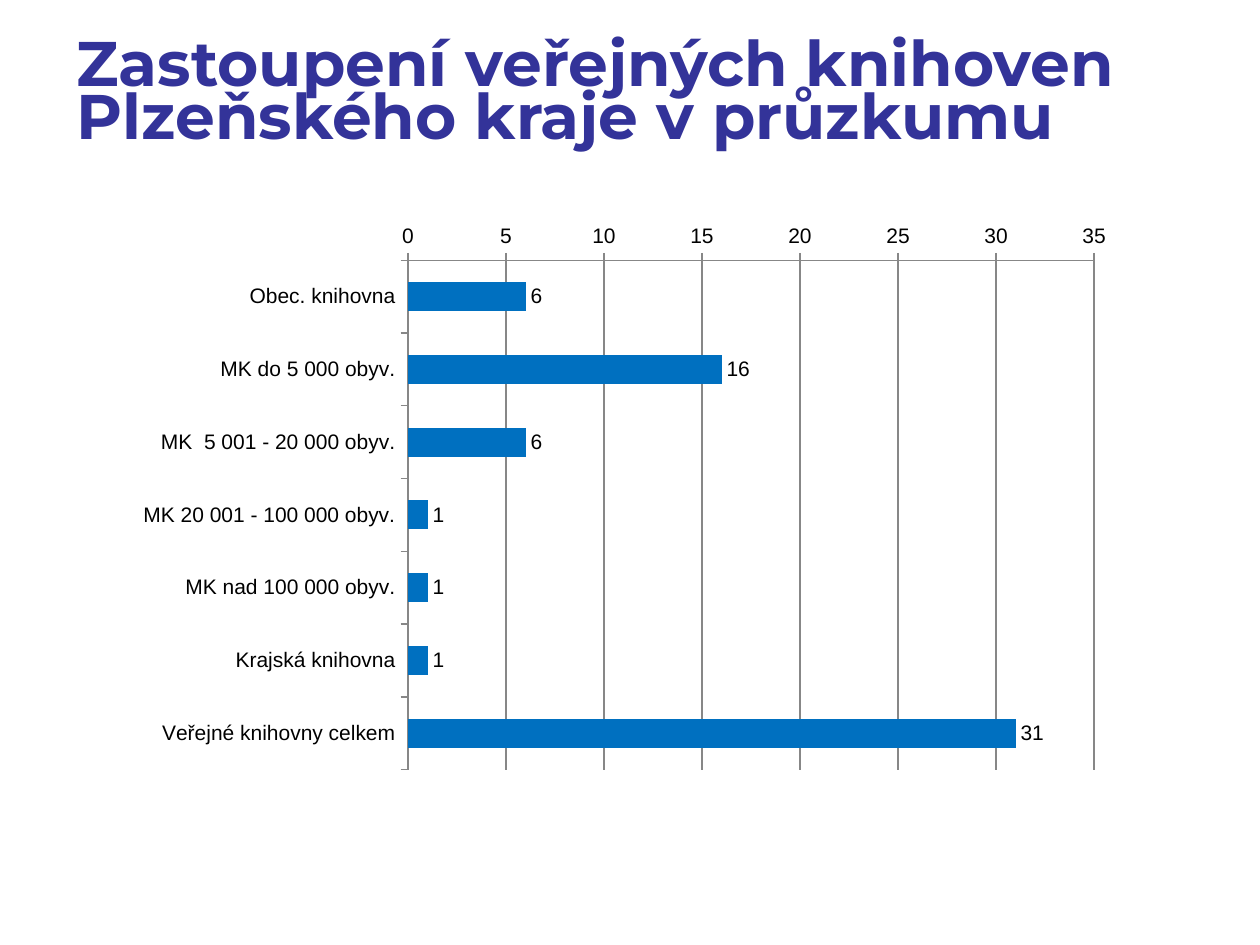
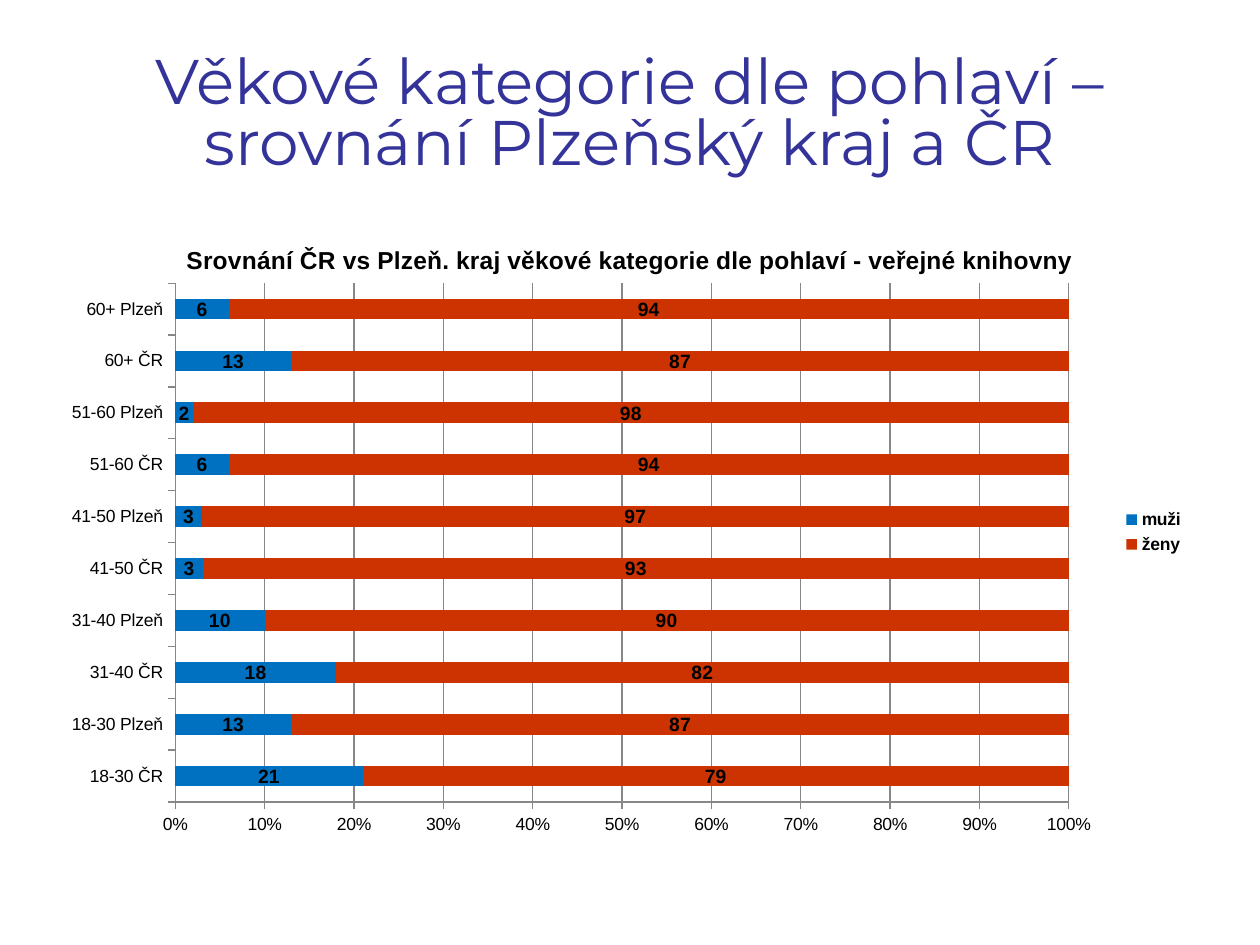
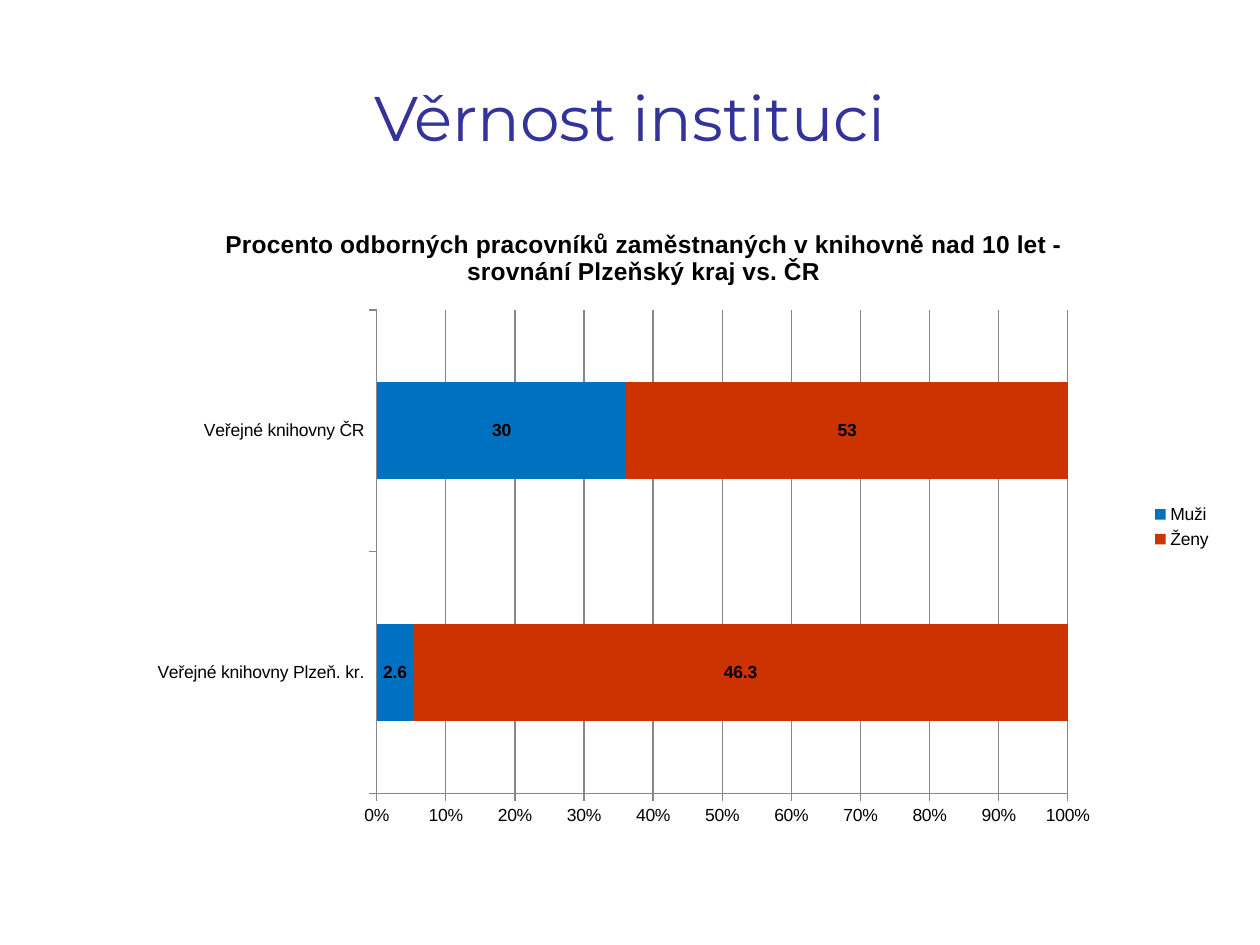
from lxml.etree import SubElement
from pptx import Presentation
from pptx.chart.data import CategoryChartData
from pptx.dml.color import RGBColor
from pptx.enum.chart import XL_CHART_TYPE, XL_LABEL_POSITION, XL_LEGEND_POSITION, XL_TICK_MARK
from pptx.enum.text import MSO_ANCHOR, PP_ALIGN
from pptx.oxml.ns import qn
from pptx.util import Inches, Pt

SLIDE_WIDTH, SLIDE_HEIGHT = Inches(10), Inches(7.5)
COLORS = {
    "background": "FFFFFF",
    "title": "333399",
    "text": "000000",
    "axis": "878787",
    "first": "0070C0",
    "second": "CC3300",
}
TITLE_FONT, CHART_FONT = "Montserrat", "Arial"
# Boxes are left, top, width and height as shares of the slide
TITLE_BOX = (0.05, 0.04, 0.9, 0.167)


def color(name):
    return RGBColor.from_string(COLORS[name])


def place(box):
    left, top, width, height = box
    return (round(SLIDE_WIDTH * left), round(SLIDE_HEIGHT * top),
            round(SLIDE_WIDTH * width), round(SLIDE_HEIGHT * height))


def style_font(font, name, size, color_name, bold=False):
    font.name, font.size, font.bold = name, Pt(size), bold
    font.color.rgb = color(color_name)


def add_slide(presentation):
    slide = presentation.slides.add_slide(presentation.slide_layouts[6])
    slide.background.fill.solid()
    slide.background.fill.fore_color.rgb = color("background")
    return slide


def add_title(slide, text, box=TITLE_BOX, align=PP_ALIGN.CENTER, bold=False,
              line_spacing=1.0, bottom_margin=0.05):
    text_frame = slide.shapes.add_textbox(*place(box)).text_frame
    text_frame.word_wrap = True
    text_frame.vertical_anchor = MSO_ANCHOR.MIDDLE
    text_frame.margin_bottom = Inches(bottom_margin)
    text_frame.text = text
    paragraph = text_frame.paragraphs[0]
    paragraph.alignment = align
    paragraph.line_spacing = line_spacing
    style_font(paragraph.runs[0].font, TITLE_FONT, 36, "title", bold)


def set_plot_area(chart, area):
    """Fix the inner plot area, given as shares of the chart."""
    plot_area = chart.plots[0]._element.getparent()
    for old_layout in plot_area.findall(qn("c:layout")):
        plot_area.remove(old_layout)
    layout = SubElement(plot_area, qn("c:layout"))
    plot_area.insert(0, layout)
    manual = SubElement(layout, qn("c:manualLayout"))
    settings = [("layoutTarget", "inner"), ("xMode", "edge"), ("yMode", "edge")]
    settings += zip("xywh", map(str, area))
    for tag, value in settings:
        SubElement(manual, qn(f"c:{tag}")).set("val", value)


def style_axes(chart):
    for axis in (chart.category_axis, chart.value_axis):
        axis.major_tick_mark = XL_TICK_MARK.OUTSIDE
        axis.minor_tick_mark = XL_TICK_MARK.NONE
        axis.format.line.color.rgb = color("axis")
        axis.format.line.width = Pt(0.75)
    chart.category_axis.has_major_gridlines = False
    value_axis = chart.value_axis
    value_axis.has_major_gridlines = True
    value_axis.major_gridlines.format.line.color.rgb = color("axis")
    value_axis.major_gridlines.format.line.width = Pt(0.75)


def style_series(series, color_name, label_size, bold, number_format):
    series.format.fill.solid()
    series.format.fill.fore_color.rgb = color(color_name)
    series.invert_if_negative = False
    labels = series.data_labels
    labels.show_value = True
    labels.number_format = number_format
    labels.number_format_is_linked = False
    style_font(labels.font, CHART_FONT, label_size, "text", bold)


def add_bar_chart(slide, chart_type, box, area, categories, series_values,
                  size, label_size, bold_labels=False, number_format="General"):
    data = CategoryChartData()
    data.categories = categories
    for name, values in series_values.items():
        data.add_series(name, values)
    chart = slide.shapes.add_chart(chart_type, *place(box), data).chart
    style_font(chart.font, CHART_FONT, size, "text")
    chart.has_title = chart.has_legend = False
    plot = chart.plots[0]
    plot.gap_width = 150
    plot.vary_by_categories = False
    for series, color_name in zip(plot.series, ("first", "second")):
        style_series(series, color_name, label_size, bold_labels, number_format)
    style_axes(chart)
    set_plot_area(chart, area)
    return chart


def add_share_chart(slide, title, box, area, categories, series_values,
                    label_size, number_format="General", bold_legend=False):
    chart = add_bar_chart(slide, XL_CHART_TYPE.BAR_STACKED_100, box, area, categories,
                          series_values, 10, label_size, True, number_format)
    chart.plots[0].overlap = 100
    chart.value_axis.tick_labels.number_format = "0%"
    chart.value_axis.tick_labels.number_format_is_linked = False
    # Chart title
    chart.has_title = True
    text_frame = chart.chart_title.text_frame
    text_frame.text = title
    style_font(text_frame.paragraphs[0].runs[0].font, CHART_FONT, 14, "text", True)
    chart.chart_title.include_in_layout = False
    # Legend
    chart.has_legend = True
    chart.legend.position = XL_LEGEND_POSITION.RIGHT
    chart.legend.include_in_layout = False
    style_font(chart.legend.font, CHART_FONT, 10, "text", bold_legend)


def add_libraries_slide(presentation):
    slide = add_slide(presentation)
    add_title(slide, "Zastoupení veřejných knihoven Plzeňského kraje v průzkumu",
              box=(0.051, 0.059, 0.9, 0.145), align=PP_ALIGN.LEFT, bold=True,
              line_spacing=0.7, bottom_margin=0.48)
    categories = ["Obec. knihovna", "MK do 5 000 obyv.", "MK  5 001 - 20 000 obyv.",
                  "MK 20 001 - 100 000 obyv.", "MK nad 100 000 obyv.",
                  "Krajská knihovna", "Veřejné knihovny celkem"]
    chart = add_bar_chart(slide, XL_CHART_TYPE.BAR_CLUSTERED,
                          (0.098, 0.227, 0.795, 0.599), (0.284, 0.081, 0.685, 0.9),
                          categories, {"Series 1": [6, 16, 6, 1, 1, 1, 31]}, 12, 12)
    chart.category_axis.reverse_order = True
    chart.value_axis.minimum_scale = 0
    chart.value_axis.maximum_scale = 35
    chart.value_axis.major_unit = 5
    chart.plots[0].series[0].data_labels.position = XL_LABEL_POSITION.OUTSIDE_END


def add_age_slide(presentation):
    slide = add_slide(presentation)
    add_title(slide, "Věkové kategorie dle pohlaví – srovnání Plzeňský kraj a ČR",
              line_spacing=0.8)
    categories = [f"{age} {region}" for age in ("18-30", "31-40", "41-50", "51-60", "60+")
                  for region in ("ČR", "Plzeň")]
    add_share_chart(
        slide, "Srovnání ČR vs Plzeň. kraj věkové kategorie dle pohlaví - veřejné knihovny",
        (0.05, 0.233, 0.9, 0.66), (0.099, 0.101, 0.788, 0.832), categories,
        {"muži": [21, 13, 18, 10, 3, 3, 6, 2, 13, 6],
         "ženy": [79, 87, 82, 90, 93, 97, 94, 98, 87, 94]},
        label_size=11, number_format="0", bold_legend=True)


def add_loyalty_slide(presentation):
    slide = add_slide(presentation)
    add_title(slide, "Věrnost instituci")
    add_share_chart(
        slide, "Procento odborných pracovníků zaměstnaných v knihovně nad 10 let - "
        "srovnání Plzeňský kraj vs. ČR",
        (0.05, 0.216, 0.922, 0.683), (0.27, 0.164, 0.595, 0.749),
        ["Veřejné knihovny Plzeň. kr.", "Veřejné knihovny ČR"],
        {"Muži": [2.6, 30], "Ženy": [46.3, 53]}, label_size=10)


def main():
    presentation = Presentation()
    presentation.slide_width, presentation.slide_height = SLIDE_WIDTH, SLIDE_HEIGHT
    add_libraries_slide(presentation)
    add_age_slide(presentation)
    add_loyalty_slide(presentation)
    presentation.save("out.pptx")


if __name__ == "__main__":
    main()
